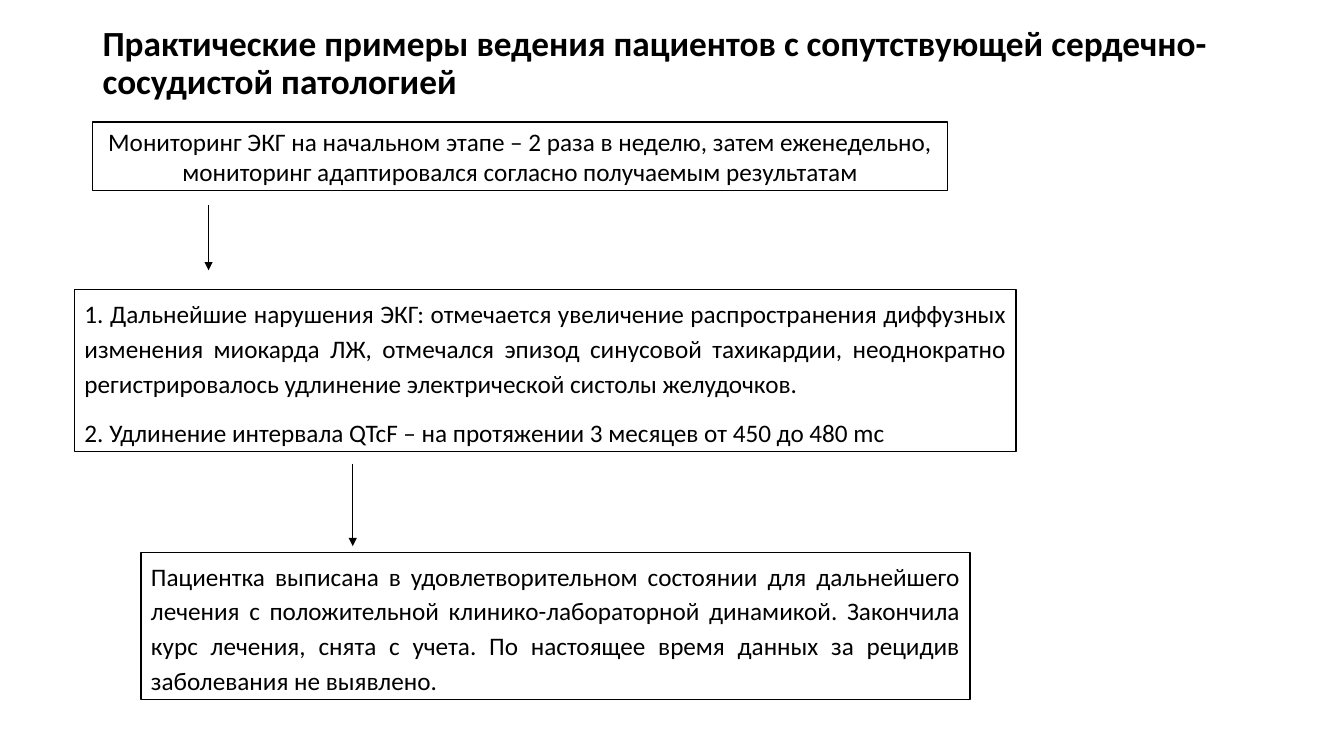
from pptx import Presentation
from pptx.dml.color import RGBColor
from pptx.enum import shapes, text
from pptx.oxml.ns import qn
from pptx.util import Pt
from lxml import etree

BLACK = "000000"
ALIGN = text.PP_ALIGN
ANCHOR = text.MSO_ANCHOR

TITLE = ("Практические примеры ведения пациентов с сопутствующей "
         "сердечно-сосудистой патологией")
MONITORING = ["Мониторинг ЭКГ на начальном этапе – 2 раза в неделю, затем еженедельно, "
              "мониторинг адаптировался согласно получаемым результатам"]
FINDINGS = [
    "1. Дальнейшие нарушения ЭКГ: отмечается увеличение распространения диффузных "
    "изменения миокарда ЛЖ, отмечался эпизод синусовой тахикардии, неоднократно "
    "регистрировалось удлинение электрической систолы желудочков.",
    "2. Удлинение интервала QTcF – на протяжении 3 месяцев от 450 до 480 mc",
]
OUTCOME = ["Пациентка выписана в удовлетворительном состоянии для дальнейшего лечения "
           "с положительной клинико-лабораторной динамикой. Закончила курс лечения, "
           "снята с учета. По настоящее время данных за рецидив заболевания не выявлено."]


def color(hex_code):
    return RGBColor.from_string(hex_code)


def write(sp, paragraphs, size=18, bold=False, align=ALIGN.LEFT,
          anchor=ANCHOR.MIDDLE, spacing=1.0, after=0):
    tf = sp.text_frame
    tf.word_wrap = True
    tf.vertical_anchor = anchor
    for i, content in enumerate(paragraphs):
        p = tf.paragraphs[0] if i == 0 else tf.add_paragraph()
        p.alignment = align
        p.line_spacing = spacing
        p.space_after = Pt(after)
        r = p.add_run()
        r.text = content
        r.font.name = "Calibri"
        r.font.size = Pt(size)
        r.font.bold = bold
        r.font.color.rgb = color(BLACK)


def add_title(slide, box):
    sp = slide.shapes.add_textbox(*map(Pt, box))
    write(sp, [TITLE], size=25.2, bold=True, spacing=0.9)


def add_step(slide, box, paragraphs, border=1, **fmt):
    sp = slide.shapes.add_shape(shapes.MSO_SHAPE.RECTANGLE, *map(Pt, box))
    sp.shadow.inherit = False
    sp.fill.background()
    sp.line.color.rgb = color(BLACK)
    sp.line.width = Pt(border)
    write(sp, paragraphs, **fmt)


def add_down_arrow(slide, x, top, bottom):
    line = slide.shapes.add_connector(
        shapes.MSO_CONNECTOR.STRAIGHT, Pt(x), Pt(top), Pt(x), Pt(bottom))
    line.line.color.rgb = color(BLACK)
    line.line.width = Pt(0.5)
    etree.SubElement(line.line._get_or_add_ln(), qn("a:tailEnd"), type="triangle")
    etree.SubElement(line._element.spPr, qn("a:effectLst"))


def add_flow(slide, box):
    """Place the three steps and the arrows between them."""
    left, top, width, height = box
    body = dict(align=ALIGN.JUSTIFY, spacing=1.15, after=10)
    add_step(slide, (left + 12.9, top, 610.6, 49), MONITORING, align=ALIGN.CENTER)
    add_down_arrow(slide, left + 95.7, top + 59, top + 106)
    add_step(slide, (left, top + 119.5, width, 116), FINDINGS,
             border=0.75, anchor=ANCHOR.TOP, **body)
    add_down_arrow(slide, left + 198.7, top + 244, top + 303)
    add_step(slide, (left + 47.5, top + height - 105, 592, 105), OUTCOME, **body)


def main():
    prs = Presentation()
    prs.slide_width, prs.slide_height = Pt(960), Pt(540)
    slide = prs.slides.add_slide(prs.slide_layouts[6])
    add_title(slide, (66.2, 18, 828, 55.4))
    add_flow(slide, (53.3, 87.1, 672.5, 412.6))
    prs.save("out.pptx")


if __name__ == "__main__":
    main()
